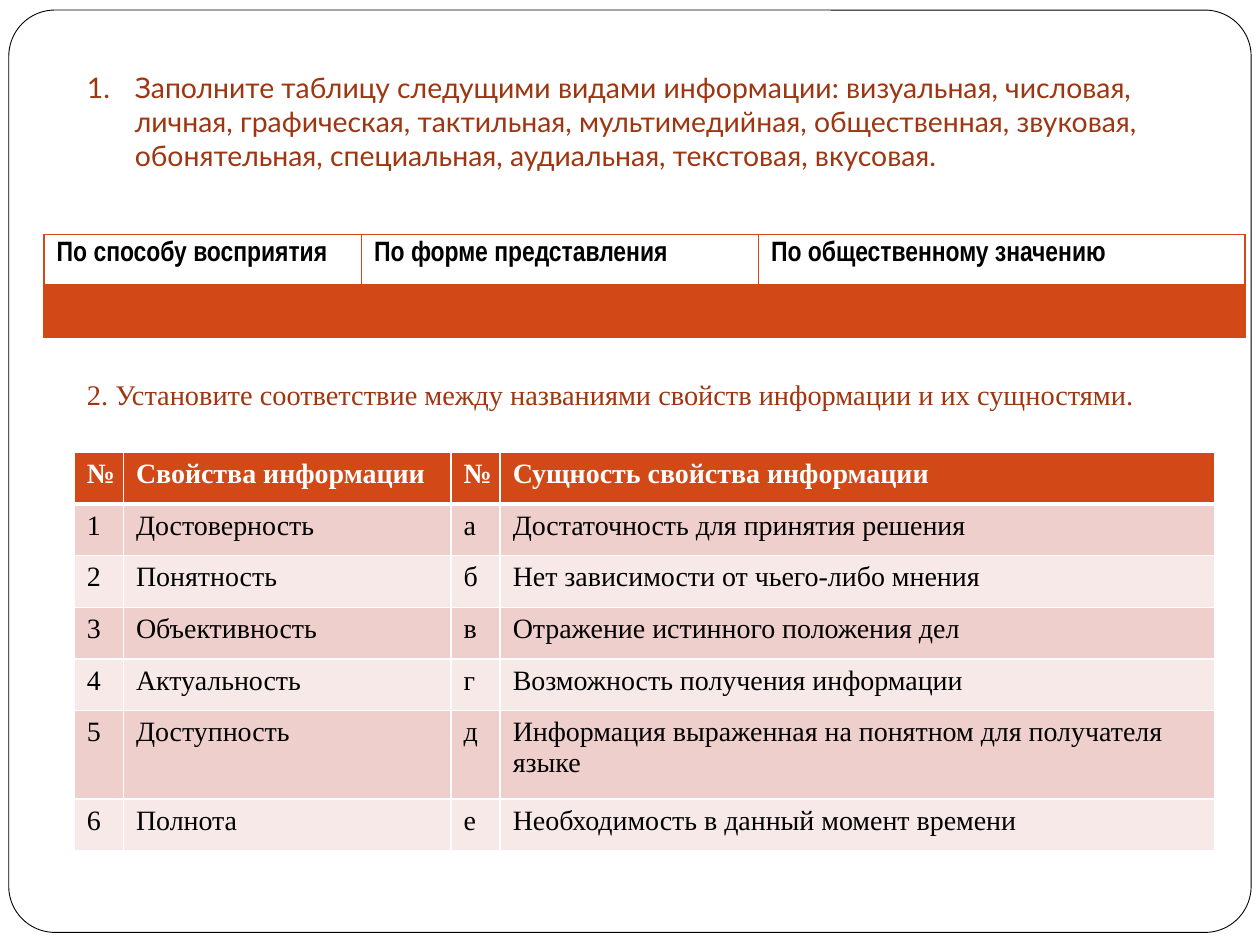
import pptx
import pptx.util
import pptx.dml.color
import pptx.enum.shapes
import pptx.enum.text
import pptx.oxml.ns
from lxml import etree

Inches, Pt = pptx.util.Inches, pptx.util.Pt
qn = pptx.oxml.ns.qn

COLORS = {
    "title": "9E3611",
    "accent": "D34817",
    "band_dark": "EFCFCC",
    "band_light": "F7E9E8",
    "white": "FFFFFF",
    "black": "000000",
}

TASKS = [
    ("Заполните таблицу следущими видами информации: визуальная, числовая, "
     "личная, графическая, тактильная, мультимедийная, общественная, звуковая, "
     "обонятельная, специальная, аудиальная, текстовая, вкусовая.", "Lato"),
    ("2. Установите соответствие между названиями свойств информации "
     "и их сущностями.", "Times New Roman"),
]
KINDS = [
    ["По способу восприятия", "По форме представления", "По общественному значению"],
    ["", "", ""],
]
PROPERTIES = [
    ["№", "Свойства информации", "№", "Сущность свойства информации"],
    ["1", "Достоверность", "а", "Достаточность для принятия решения"],
    ["2", "Понятность", "б", "Нет зависимости от чьего-либо мнения"],
    ["3", "Объективность", "в", "Отражение истинного положения дел"],
    ["4", "Актуальность", "г", "Возможность получения информации"],
    ["5", "Доступность", "д", "Информация выраженная на понятном для получателя языке"],
    ["6", "Полнота", "е", "Необходимость в данный момент времени"],
]


def rgb(name):
    return pptx.dml.color.RGBColor.from_string(COLORS[name])


def format_run(r, font, size, color, bold=False):
    r.font.name = font
    r.font.size = Pt(size)
    r.font.bold = bold
    r.font.color.rgb = rgb(color)


def add_frame(slide):
    """Rounded page outline, placed behind everything else."""
    s = slide.shapes.add_shape(
        pptx.enum.shapes.MSO_SHAPE.ROUNDED_RECTANGLE,
        Inches(0.07), Inches(0.08), Inches(9.86), Inches(7.32))
    s.adjustments[0] = 0.05
    s.shadow.inherit = False
    s.fill.solid()
    s.fill.fore_color.rgb = rgb("white")
    s.line.color.rgb = rgb("black")
    s.line.width = Pt(0.5)
    slide.shapes._spTree.insert(2, s._element)


def fill_title(title):
    title.left, title.top = Inches(0.59), Inches(0.76)
    title.width, title.height = Inches(9), Inches(2.6)
    tf = title.text_frame
    tf.text = "\n".join(text for text, _ in TASKS)
    tf.word_wrap = True
    tf.auto_size = pptx.enum.text.MSO_AUTO_SIZE.NONE
    tf.vertical_anchor = pptx.enum.text.MSO_ANCHOR.BOTTOM
    tf.margin_bottom = Inches(0.1)
    for p, (_, font) in zip(tf.paragraphs, TASKS):
        p.alignment = pptx.enum.text.PP_ALIGN.LEFT
        pPr = p._p.get_or_add_pPr()
        pPr.set("marL", str(Inches(0.38)))
        pPr.set("indent", str(-Inches(0.38)))
        format_run(p.runs[0], font, 16.2, "title")
    first, second = tf.paragraphs
    etree.SubElement(first._p.pPr, qn("a:buAutoNum"), type="arabicPeriod")
    second.alignment = pptx.enum.text.PP_ALIGN.JUSTIFY
    second.space_before = Pt(117)


def set_borders(cell, color, top, bottom):
    """Draw all four sides; left and right are always 1 pt."""
    widths = {"a:lnL": 1, "a:lnR": 1, "a:lnT": top, "a:lnB": bottom}
    tcPr = cell._tc.get_or_add_tcPr()
    for i, (tag, width) in enumerate(widths.items()):
        ln = etree.Element(qn(tag), w=str(Pt(width)))
        fill = etree.SubElement(ln, qn("a:solidFill"))
        etree.SubElement(fill, qn("a:srgbClr"), val=COLORS[color])
        tcPr.insert(i, ln)


def fill_cell(cell, color, alpha=None):
    if color is None:
        cell.fill.background()
        return
    cell.fill.solid()
    cell.fill.fore_color.rgb = rgb(color)
    if alpha:
        clr = cell._tc.tcPr.find(".//" + qn("a:srgbClr"))
        etree.SubElement(clr, qn("a:alpha"), val=str(alpha * 1000))


def add_table(slide, left, top, widths, heights, rows, font, header_color,
              border, header_rule):
    """Table with a bold header and a thicker rule beneath it."""
    table = slide.shapes.add_table(
        len(rows), len(widths), Inches(left), Inches(top),
        Inches(sum(widths)), Inches(sum(heights))).table
    for column, width in zip(table.columns, widths):
        column.width = Inches(width)
    for i, (row, height) in enumerate(zip(rows, heights)):
        table.rows[i].height = Inches(height)
        for j, text in enumerate(row):
            cell = table.cell(i, j)
            cell.text = text
            for r in cell.text_frame.paragraphs[0].runs:
                format_run(r, font, 16, "black" if i else header_color, bold=i == 0)
            set_borders(cell, border, header_rule if i == 1 else 1,
                        header_rule if i == 0 else 1)
    return table


def add_kinds_table(slide):
    table = add_table(slide, 0.35, 1.86, [2.52, 3.15, 3.86], [0.41] * 2, KINDS,
                      "Arial Narrow", "black", "accent", 2)
    for j in range(len(KINDS[0])):
        fill_cell(table.cell(0, j), None)
        fill_cell(table.cell(1, j), "accent", alpha=20)


def add_properties_table(slide):
    heights = [0.41] * 5 + [0.7, 0.41]
    table = add_table(slide, 0.59, 3.59, [0.39, 2.6, 0.39, 5.67], heights, PROPERTIES,
                      "Times New Roman", "white", "white", 3)
    for i, row in enumerate(table.rows):
        band = "band_dark" if i % 2 else "band_light"
        for cell in row.cells:
            fill_cell(cell, band if i else "accent")


def main():
    prs = pptx.Presentation()
    prs.slide_width, prs.slide_height = Inches(10), Inches(7.5)
    slide = prs.slides.add_slide(prs.slide_layouts[5])
    add_frame(slide)
    fill_title(slide.shapes.title)
    add_kinds_table(slide)
    add_properties_table(slide)
    prs.save("out.pptx")


if __name__ == "__main__":
    main()
